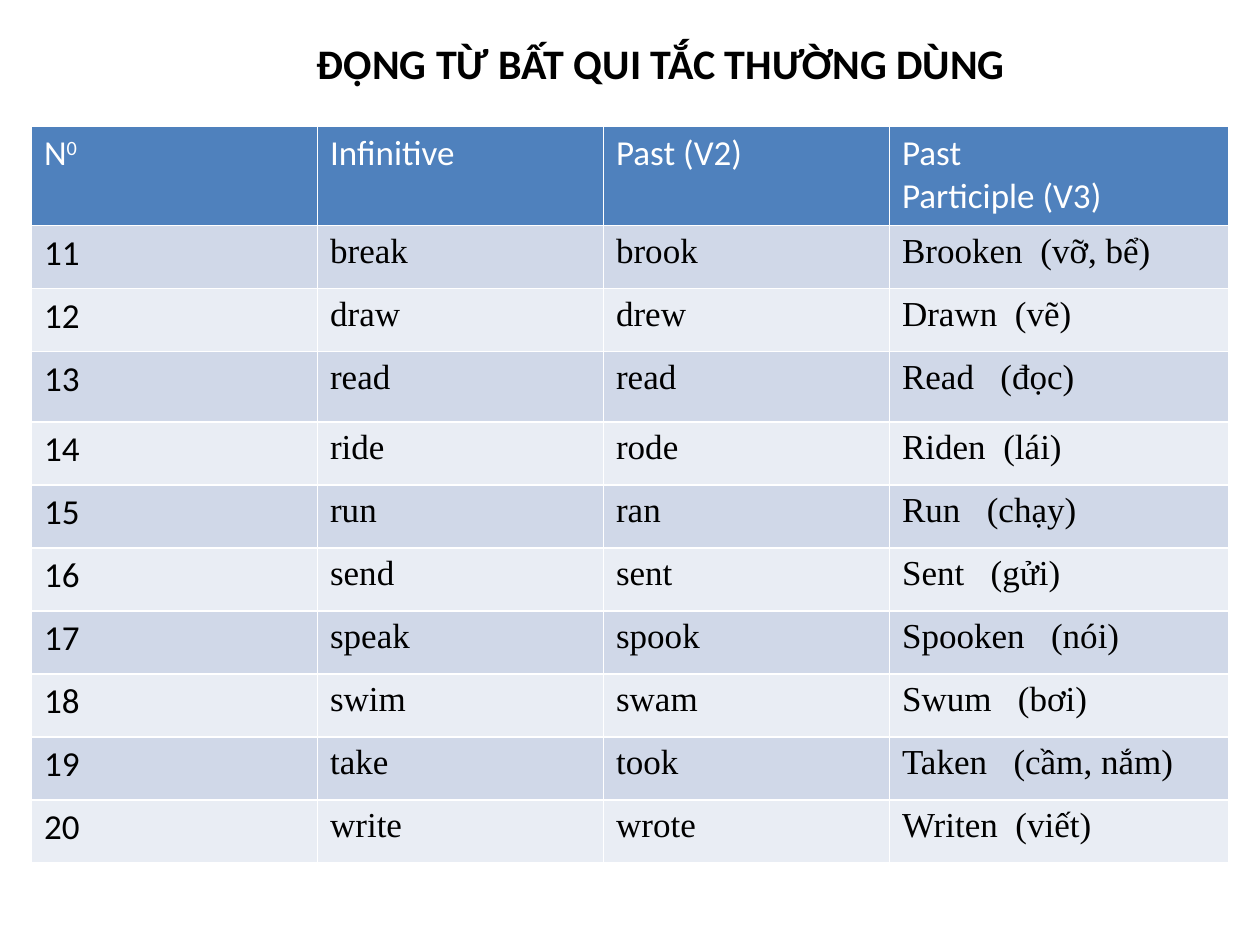
from pptx import Presentation
from pptx import util as u
from pptx.dml import color
from pptx.enum import text

HEADERS = ["N", "Infinitive", "Past (V2)", "Past\nParticiple (V3)"]
VERBS = [
    ("break", "brook", "Brooken", "(vỡ, bể)", 5),
    ("draw", "drew", "Drawn", "(vẽ)", 5),
    ("read", "read", "Read", "(đọc)", 10),
    ("ride", "rode", "Riden", "(lái)", 5),
    ("run", "ran", "Run", "(chạy)", 10),
    ("send", "sent", "Sent", "(gửi)", 10),
    ("speak", "spook", "Spooken", "(nói)", 10),
    ("swim", "swam", "Swum", "(bơi)", 10),
    ("take", "took", "Taken", "(cầm, nắm)", 10),
    ("write", "wrote", "Writen", "(viết)", 5),
]
FIRST_NUMBER = 11
COLUMN_WIDTHS = [2.27, 2.27, 2.27, 2.69]
HEADER_HEIGHT, ROW_HEIGHT, TALL_ROW_HEIGHT = 0.79, 0.5, 0.56
TALL_VERB = 2


def rgb(value):
    return color.RGBColor.from_string(value)


class VerbSlide:
    sans, serif = "Calibri", "Times New Roman"
    black, white, header = "000000", "FFFFFF", "4F81BD"
    bands = ["D0D8E8", "E9EDF4"]

    def __init__(self, deck):
        self.page = deck.slides.add_slide(deck.slide_layouts[5])

    def format(self, frame, font, size, ink, bold=False):
        for para in frame.paragraphs:
            for span in para.runs:
                span.font.name = font
                span.font.size = u.Pt(size)
                span.font.bold = bold
                span.font.color.rgb = rgb(ink)

    def title(self, words, left, top, width, height):
        box = self.page.shapes.title
        box.left, box.top = u.Inches(left), u.Inches(top)
        box.width, box.height = u.Inches(width), u.Inches(height)
        frame = box.text_frame
        frame.text = words
        frame.auto_size = text.MSO_AUTO_SIZE.NONE
        frame.vertical_anchor = text.MSO_ANCHOR.MIDDLE
        frame.paragraphs[0].alignment = text.PP_ALIGN.CENTER
        self.format(frame, self.sans, 24, self.black, True)

    def table(self, left, top, widths, heights):
        grid = self.page.shapes.add_table(
            len(heights), len(widths), u.Inches(left), u.Inches(top),
            u.Inches(sum(widths)), u.Inches(sum(heights))).table
        for column, width in zip(grid.columns, widths):
            column.width = u.Inches(width)
        for row, height in zip(grid.rows, heights):
            row.height = u.Inches(height)
        return grid

    def cell(self, cell, words, font, ink, fill):
        cell.fill.solid()
        cell.fill.fore_color.rgb = rgb(fill)
        cell.text_frame.text = words
        self.format(cell.text_frame, font, 20, ink)

    def superscript(self, cell, words):
        span = cell.text_frame.paragraphs[0].add_run()
        span.text = words
        self.format(cell.text_frame, self.sans, 20, self.white)
        span.font._element.set("baseline", "30000")

    def meaning(self, cell, words, gap):
        para = cell.text_frame.paragraphs[0]
        space, note = para.add_run(), para.add_run()
        space.text, note.text = " ", words
        self.format(cell.text_frame, self.serif, 20, self.black)
        space.font._element.set("spc", str(gap * 100))


def main():
    deck = Presentation()
    deck.slide_width, deck.slide_height = u.Inches(10), u.Inches(7.5)
    slide = VerbSlide(deck)
    slide.title("ĐỘNG TỪ BẤT QUI TẮC THƯỜNG DÙNG", 1.33, 0.25, 7.83, 0.5)

    heights = [HEADER_HEIGHT] + [ROW_HEIGHT] * len(VERBS)
    heights[TALL_VERB + 1] = TALL_ROW_HEIGHT
    grid = slide.table(0.25, 1, COLUMN_WIDTHS, heights)
    for column, words in enumerate(HEADERS):
        slide.cell(grid.cell(0, column), words, slide.sans, slide.white, slide.header)
    slide.superscript(grid.cell(0, 0), "0")

    for index, (*forms, meaning, gap) in enumerate(VERBS):
        row, fill = index + 1, slide.bands[index % 2]
        slide.cell(grid.cell(row, 0), str(FIRST_NUMBER + index), slide.sans, slide.black, fill)
        for column, words in enumerate(forms, 1):
            slide.cell(grid.cell(row, column), words, slide.serif, slide.black, fill)
        slide.meaning(grid.cell(row, 3), meaning, gap)

    deck.save("out.pptx")


if __name__ == "__main__":
    main()
